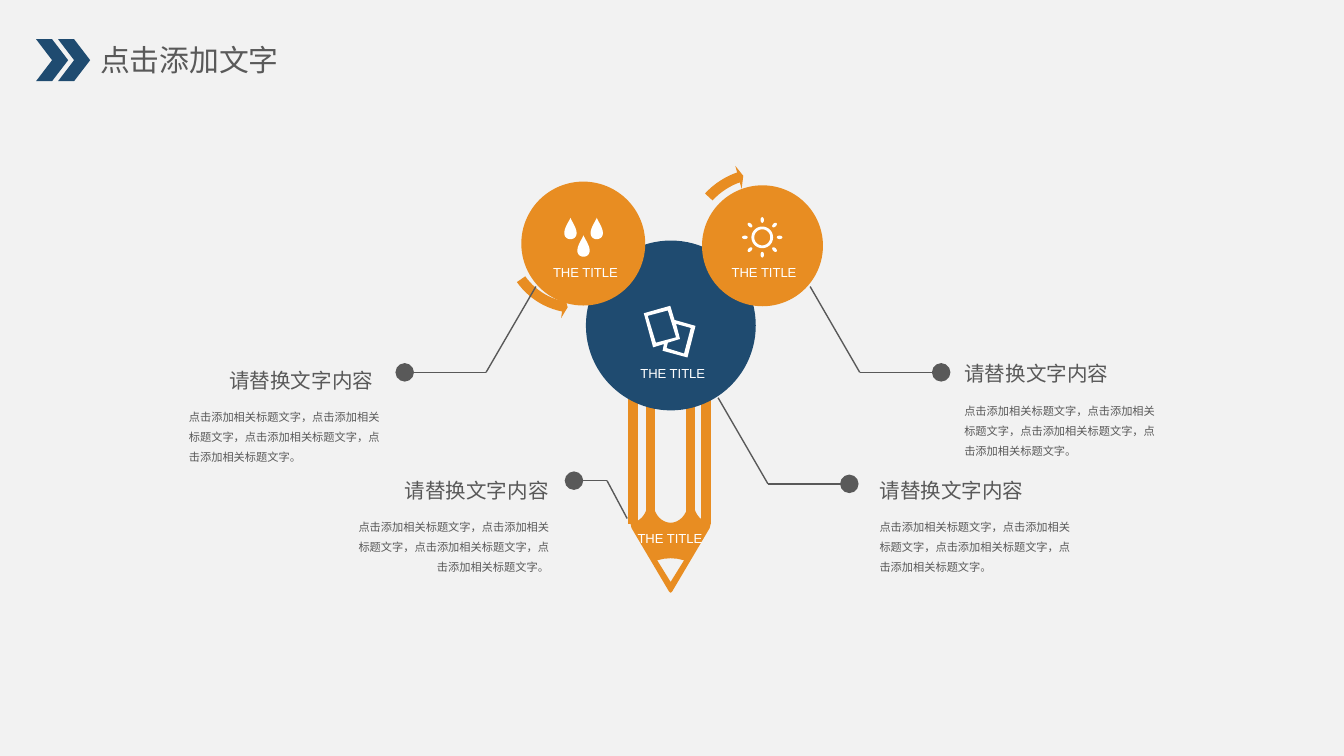
from math import cos, pi, radians, sin

from lxml.etree import SubElement
from pptx import Presentation
from pptx.dml.color import RGBColor
from pptx.enum.shapes import MSO_CONNECTOR, MSO_SHAPE
from pptx.enum.text import MSO_ANCHOR, MSO_AUTO_SIZE, PP_ALIGN
from pptx.oxml.ns import qn
from pptx.util import Pt

ORANGE, BLUE, GREY, WHITE = "E88D22", "1F4B70", "595959", "FFFFFF"


def paint(item, colour):
    """Colour a font, connector or filled shape and drop any shadow."""
    rgb = RGBColor.from_string(colour)
    if hasattr(item, "begin_x"):
        item.line.color.rgb = rgb
        SubElement(item.element.spPr, qn("a:effectLst"))
    elif hasattr(item, "fill") and hasattr(item, "shadow"):
        item.fill.solid()
        item.fill.fore_color.rgb = rgb
        item.line.fill.background()
        item.shadow.inherit = False
    else:
        item.color.rgb = rgb


def add_outline(shapes, contours, colour):
    """Draw closed contours, given in points, as one freeform with holes."""
    contours = [[(Pt(x), Pt(y)) for x, y in contour] for contour in contours]
    builder = shapes.build_freeform(*contours[0][0])
    for index, contour in enumerate(contours):
        if index:
            builder.move_to(*contour[0])
        builder.add_line_segments(contour[1:], close=True)
    paint(builder.convert_to_shape(), colour)


presentation = Presentation()
presentation.slide_width, presentation.slide_height = Pt(720), Pt(405)
slide = presentation.slides.add_slide(presentation.slide_layouts[5])
shapes = slide.shapes
slide.background.fill.solid()
slide.background.fill.fore_color.rgb = RGBColor.from_string("F2F2F2")

# Title with double chevron
title = shapes.title
title.left, title.top, title.width, title.height = Pt(48.2), Pt(19.4), Pt(141), Pt(24.5)
frame = title.text_frame
frame.text = "点击添加文字"
frame.vertical_anchor = MSO_ANCHOR.TOP
frame.auto_size = MSO_AUTO_SIZE.NONE
frame.margin_left = frame.margin_right = Pt(5.4)
frame.margin_top = frame.margin_bottom = Pt(2.7)
frame.paragraphs[0].alignment = PP_ALIGN.LEFT
run = frame.paragraphs[0].runs[0]
run.font.size, run.font.name = Pt(16), "Noto Sans CJK SC"
paint(run.font, GREY)
SubElement(run.font._element, qn("a:ea"), typeface="Noto Sans CJK SC")

for left in (19.3, 31.1):
    chevron = shapes.add_shape(MSO_SHAPE.CHEVRON, Pt(left), Pt(21), Pt(17.2), Pt(22.5))
    paint(chevron, BLUE)

# Pencil body
for x, top in ((339.1, 208.8), (378.2, 208.8), (348.5, 203), (369.9, 202.3)):
    stripe = shapes.add_connector(MSO_CONNECTOR.STRAIGHT, Pt(x), Pt(top), Pt(x), Pt(top + 72))
    stripe.line.width = Pt(5)
    paint(stripe, ORANGE)

# Pencil tip: scalloped upper edge, point, and a hole for the lead
axis = 359.3
tip = []
for centre, radius_x, radius_y, start, end in (
    (-21.6, 9.4, 11.5, 90, 0),
    (-10.8, 1.4, -1.4, 180, 0),
    (0, 9.4, 11.5, 180, 0),
    (10.8, 1.4, -1.4, 180, 0),
    (21.6, 9.4, 11.5, 180, 90),
):
    for angle in range(start, end - 1, -10):
        tip.append((axis + centre + radius_x * cos(radians(angle)),
                    268.6 + radius_y * sin(radians(angle))))
tip += [(axis + x, y) for x, y in
        ((20.9, 283), (0.8, 317), (0, 317.6), (-0.8, 317), (-20.9, 283))]
lead = [(axis + x, y) for x, y in
        ((-7.2, 300.2), (-3.6, 299.4), (0, 299.1), (3.6, 299.4), (7.2, 300.2), (0, 311.8))]
add_outline(shapes, [tip, lead], ORANGE)

# Circles
for left, top, size, colour in (
    (313.9, 128.9, 91, BLUE),
    (279.3, 97.3, 66.4, ORANGE),
    (376.1, 99.3, 64.8, ORANGE),
):
    circle = shapes.add_shape(MSO_SHAPE.OVAL, Pt(left), Pt(top), Pt(size), Pt(size))
    paint(circle, colour)

# Curved arrows: thickness, three angles in degrees, head width
for kind, left, top, width, height, rotation, thickness, angles, head in (
    (MSO_SHAPE.LEFT_CIRCULAR_ARROW, 266.4, 87.1, 85, 84.2, 357.1,
     0.065, (4.3, 104.89, 148.38), 0.075),
    (MSO_SHAPE.CIRCULAR_ARROW, 362.9, 86.4, 91.4, 91.4, 117.5,
     0.06, (3.94, 133.14, 105.08), 0.07),
):
    arrow = shapes.add_shape(kind, Pt(left), Pt(top), Pt(width), Pt(height))
    arrow.rotation = rotation
    values = [thickness, *(angle * 0.6 for angle in angles), head]
    for index, value in enumerate(values):
        arrow.adjustments[index] = value
    paint(arrow, ORANGE)

# Water drops icon
turn = [radians(angle) for angle in range(0, 360, 10)]
drops = [
    [(x + 4.7 * sin(t) * sin(t / 2) ** 1.5, y - 5.75 * cos(t)) for t in turn]
    for x, y in ((305.6, 122.4), (319.7, 122.4), (312.6, 131.8))
]
add_outline(shapes, drops, WHITE)

# Sun icon: a ring and eight rays
sun_x, sun_y = 408.4, 127.2
sun = [[(sun_x + r * cos(t), sun_y + r * sin(t)) for t in turn] for r in (5.8, 4.3)]
for ray in range(8):
    a = ray * pi / 4
    sun.append([
        (sun_x + (9.3 + 1.5 * cos(t)) * cos(a) - 0.9 * sin(t) * sin(a),
         sun_y + (9.3 + 1.5 * cos(t)) * sin(a) + 0.9 * sin(t) * cos(a))
        for t in turn
    ])
add_outline(shapes, sun, WHITE)

# Cards icon: joint outer edge and two holes
add_outline(shapes, [
    [(344.9, 167.8), (359.1, 163.8), (361.4, 171.4), (372.6, 174.6),
     (368.3, 191.5), (355, 187.9), (355.7, 184.3), (349.9, 186.1)],
    [(347, 169.2), (357.8, 166.3), (362.2, 180.7), (351.4, 183.6)],
    [(366.5, 189.4), (357.1, 186.5), (357.8, 183.6), (364.3, 181.6),
     (362.2, 173.5), (370.1, 175.7)],
], WHITE)

# Leader lines: start, bend, dot
for start, bend, dot in (
    ((287.1, 153.5), (260.4, 199.5), (216.8, 199.5)),
    ((434, 153.5), (460.6, 199.5), (504.2, 199.5)),
    ((384.7, 213.1), (411.4, 259.2), (455, 259.2)),
    ((336, 277.8), (325.2, 257.5), (307.5, 257.5)),
):
    for begin, end in ((start, bend), (bend, dot)):
        leader = shapes.add_connector(MSO_CONNECTOR.STRAIGHT, *map(Pt, begin + end))
        leader.line.width = Pt(0.75)
        paint(leader, GREY)
    SubElement(leader.line._get_or_add_ln(), qn("a:tailEnd"), type="oval", w="lg", len="lg")

# Labels on the figure
for left, top in ((328.3, 277.2), (329.8, 188.6), (283, 134.9), (378.7, 134.9)):
    label = shapes.add_textbox(Pt(left), Pt(top), Pt(58.3), Pt(22.3))
    frame = label.text_frame
    frame.word_wrap = True
    frame.vertical_anchor = MSO_ANCHOR.MIDDLE
    frame.margin_left = Pt(2.9)
    frame.margin_right = frame.margin_top = frame.margin_bottom = 0
    frame.text = "THE TITLE"
    frame.paragraphs[0].alignment = PP_ALIGN.CENTER
    font = frame.paragraphs[0].runs[0].font
    font.size, font.name = Pt(7), "Arial"
    paint(font, WHITE)

# Headings and descriptions
heading = "请替换文字内容"
description = "，".join(["点击添加相关标题文字"] * 4) + "。"
for heading_left, heading_top, body_left, body_top, alignment in (
    (511.2, 190.8, 511.2, 210.2, PP_ALIGN.LEFT),
    (465.8, 253.4, 465.8, 272.2, PP_ALIGN.LEFT),
    (117.4, 194.4, 95.8, 213.5, PP_ALIGN.LEFT),
    (208.8, 253.4, 186.5, 272.2, PP_ALIGN.RIGHT),
):
    for text, left, top, width, height, size, name, spacing, wrap in (
        (description, body_left, body_top, 113, 38.2, 6, "Arial", 1.5, True),
        (heading, heading_left, heading_top, 90.7, 18.7, 11, "Calibri", 1, False),
    ):
        box = shapes.add_textbox(Pt(left), Pt(top), Pt(width), Pt(height))
        frame = box.text_frame
        frame.word_wrap = wrap
        frame.auto_size = MSO_AUTO_SIZE.SHAPE_TO_FIT_TEXT
        frame.margin_left = frame.margin_right = Pt(5.4)
        frame.margin_top = frame.margin_bottom = Pt(2.7)
        frame.text = text
        paragraph = frame.paragraphs[0]
        paragraph.alignment, paragraph.line_spacing = alignment, spacing
        font = paragraph.runs[0].font
        font.size, font.name = Pt(size), name
        paint(font, GREY)

presentation.save("out.pptx")
